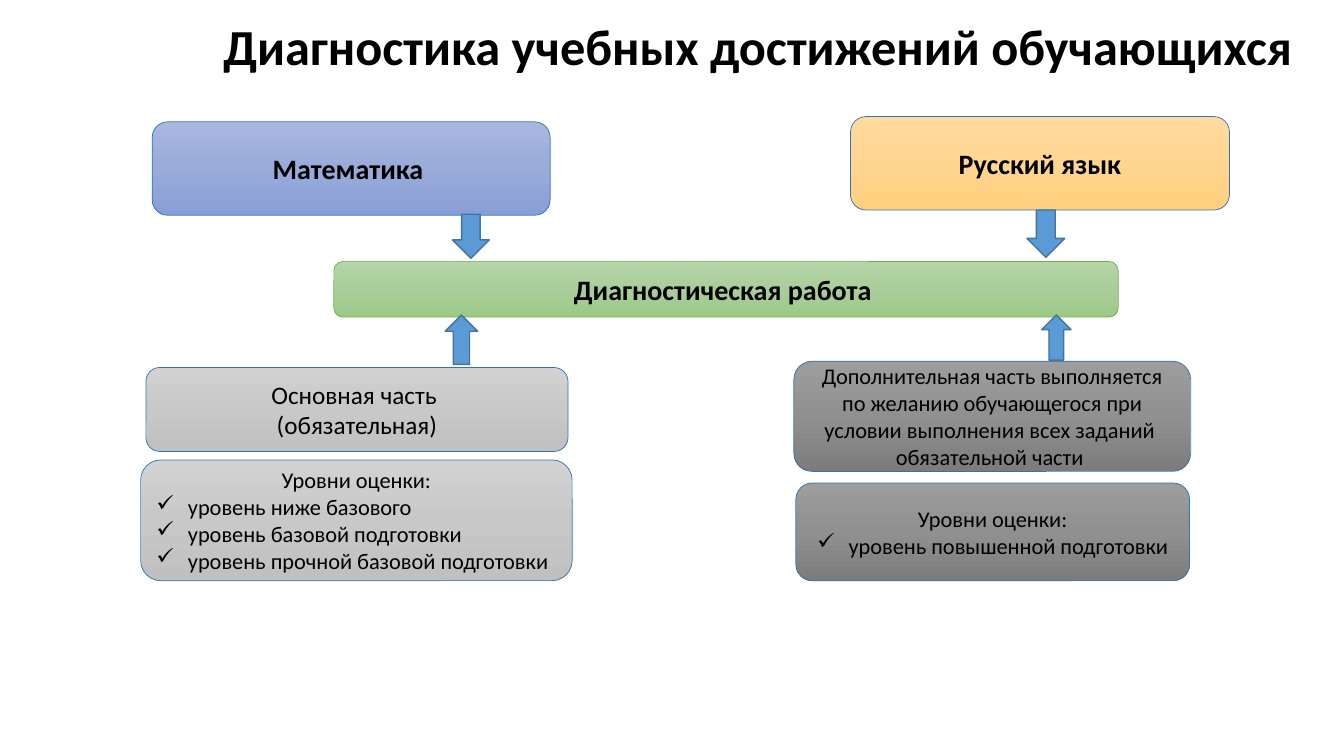
from copy import deepcopy
from dataclasses import dataclass

from lxml.etree import SubElement
from pptx import Presentation
from pptx.dml.color import RGBColor
from pptx.enum.shapes import MSO_SHAPE
from pptx.enum.text import MSO_ANCHOR, MSO_AUTO_SIZE, PP_ALIGN
from pptx.oxml.ns import qn
from pptx.util import Emu, Pt

EMU_PER_PX = 9525
FONT = "Calibri"
BULLET_INDENT = 30
BLUE_LINE = "2E75B6"

# Gradients from top to bottom
BLUE = ("A8B7DF", "9AABD9", "889ED7")
ORANGE = ("FFDB9E", "FFD590", "FFD07C")
GREEN = ("B5D5A7", "AACE9A", "9CC987")
LIGHT_GRAY = ("D2D2D2", "C8C8C8", "C0C0C0")
DARK_GRAY = ("9D9D9D", "909090", "7C7C7C")


@dataclass
class Frame:
    left: int
    top: int
    width: int
    height: int


@dataclass
class Box:
    frame: Frame
    gradient: tuple[str, str, str]
    text: str
    size: int
    bold: bool = False
    line: str = BLUE_LINE
    bullets: tuple[str, ...] = ()
    bullet_alignment: PP_ALIGN = PP_ALIGN.LEFT


@dataclass
class Arrow:
    frame: Frame
    kind: MSO_SHAPE


TITLE = "Диагностика учебных достижений обучающихся"
TITLE_FRAME = Frame(189, 15, 1066, 63)

BOXES = [
    Box(Frame(145, 116, 379, 89), BLUE, "Математика ", 20, bold=True),
    Box(Frame(810, 111, 361, 89), ORANGE, "Русский язык", 20, bold=True),
    Box(Frame(318, 249, 747, 53), GREEN, "Диагностическая работа ", 20, bold=True, line="70AD47"),
    Box(Frame(139, 350, 402, 80), LIGHT_GRAY, "Основная часть \n(обязательная)", 18),
    Box(Frame(134, 438, 411, 115), LIGHT_GRAY, "Уровни оценки:", 16,
        bullets=("уровень ниже базового", "уровень базовой подготовки",
                 "уровень прочной базовой подготовки")),
    Box(Frame(756, 344, 378, 105), DARK_GRAY,
        "Дополнительная часть выполняется по желанию обучающегося при условии "
        "выполнения всех заданий \nобязательной части ", 16),
    Box(Frame(758, 460, 375, 93), DARK_GRAY, "Уровни оценки:", 16,
        bullets=("уровень повышенной подготовки",), bullet_alignment=PP_ALIGN.CENTER),
]

ARROWS = [
    Arrow(Frame(431, 204, 35, 42), MSO_SHAPE.DOWN_ARROW),
    Arrow(Frame(978, 200, 36, 45), MSO_SHAPE.DOWN_ARROW),
    Arrow(Frame(424, 300, 31, 47), MSO_SHAPE.UP_ARROW),
    Arrow(Frame(992, 300, 28, 43), MSO_SHAPE.UP_ARROW),
]


def px(length: int) -> Emu:
    return Emu(length * EMU_PER_PX)


def color(value: str) -> RGBColor:
    return RGBColor.from_string(value)


def format_paragraph(paragraph, size: int, bold: bool, alignment=PP_ALIGN.CENTER) -> None:
    paragraph.alignment = alignment
    for run in paragraph.runs:
        run.font.name = FONT
        run.font.size = Pt(size)
        run.font.bold = bold
        run.font.color.rgb = color("000000")


def add_bullet(paragraph) -> None:
    properties = paragraph._p.get_or_add_pPr()
    properties.set("marL", str(px(BULLET_INDENT)))
    properties.set("indent", str(-px(BULLET_INDENT)))
    SubElement(properties, qn("a:buChar")).set("char", "✓")


def fill_gradient(shape, colors: tuple[str, str, str]) -> None:
    shape.fill.gradient()
    shape.fill.gradient_angle = 270
    stop_list = shape._element.spPr.find(qn("a:gradFill")).find(qn("a:gsLst"))
    stop_list.insert(1, deepcopy(stop_list[0]))
    for stop, position, value in zip(shape.fill.gradient_stops, (0, 0.5, 1), colors):
        stop.position = position
        stop.color.rgb = color(value)


def add_outlined(slide, kind: MSO_SHAPE, frame: Frame, line: str, weight: float):
    shape = slide.shapes.add_shape(
        kind, px(frame.left), px(frame.top), px(frame.width), px(frame.height))
    shape.shadow.inherit = False
    shape.line.color.rgb = color(line)
    shape.line.width = Pt(weight)
    return shape


def add_box(slide, box: Box) -> None:
    shape = add_outlined(slide, MSO_SHAPE.ROUNDED_RECTANGLE, box.frame, box.line, 0.5)
    fill_gradient(shape, box.gradient)
    text_frame = shape.text_frame
    text_frame.word_wrap = True
    text_frame.vertical_anchor = MSO_ANCHOR.MIDDLE
    text_frame.text = box.text
    for paragraph in text_frame.paragraphs:
        format_paragraph(paragraph, box.size, box.bold)
    for bullet in box.bullets:
        paragraph = text_frame.add_paragraph()
        paragraph.text = bullet
        format_paragraph(paragraph, box.size, box.bold, box.bullet_alignment)
        add_bullet(paragraph)


def add_arrow(slide, arrow: Arrow) -> None:
    shape = add_outlined(slide, arrow.kind, arrow.frame, "43739E", 1)
    shape.fill.solid()
    shape.fill.fore_color.rgb = color("5B9BD5")


def set_title(slide) -> None:
    title = slide.shapes.title
    title.left, title.top = px(TITLE_FRAME.left), px(TITLE_FRAME.top)
    title.width, title.height = px(TITLE_FRAME.width), px(TITLE_FRAME.height)
    text_frame = title.text_frame
    text_frame.text = TITLE
    text_frame.word_wrap = True
    text_frame.auto_size = MSO_AUTO_SIZE.NONE
    text_frame.vertical_anchor = MSO_ANCHOR.MIDDLE
    paragraph = text_frame.paragraphs[0]
    paragraph.line_spacing = 0.9
    format_paragraph(paragraph, 36, bold=True)


def main() -> None:
    presentation = Presentation()
    presentation.slide_width, presentation.slide_height = px(1280), px(720)
    slide = presentation.slides.add_slide(presentation.slide_layouts.get_by_name("Title Only"))

    # Title
    set_title(slide)

    # Subjects, diagnostic work and its parts
    for box in BOXES:
        add_box(slide, box)

    # Arrows pointing at the diagnostic work
    for arrow in ARROWS:
        add_arrow(slide, arrow)

    presentation.save("out.pptx")


if __name__ == "__main__":
    main()
